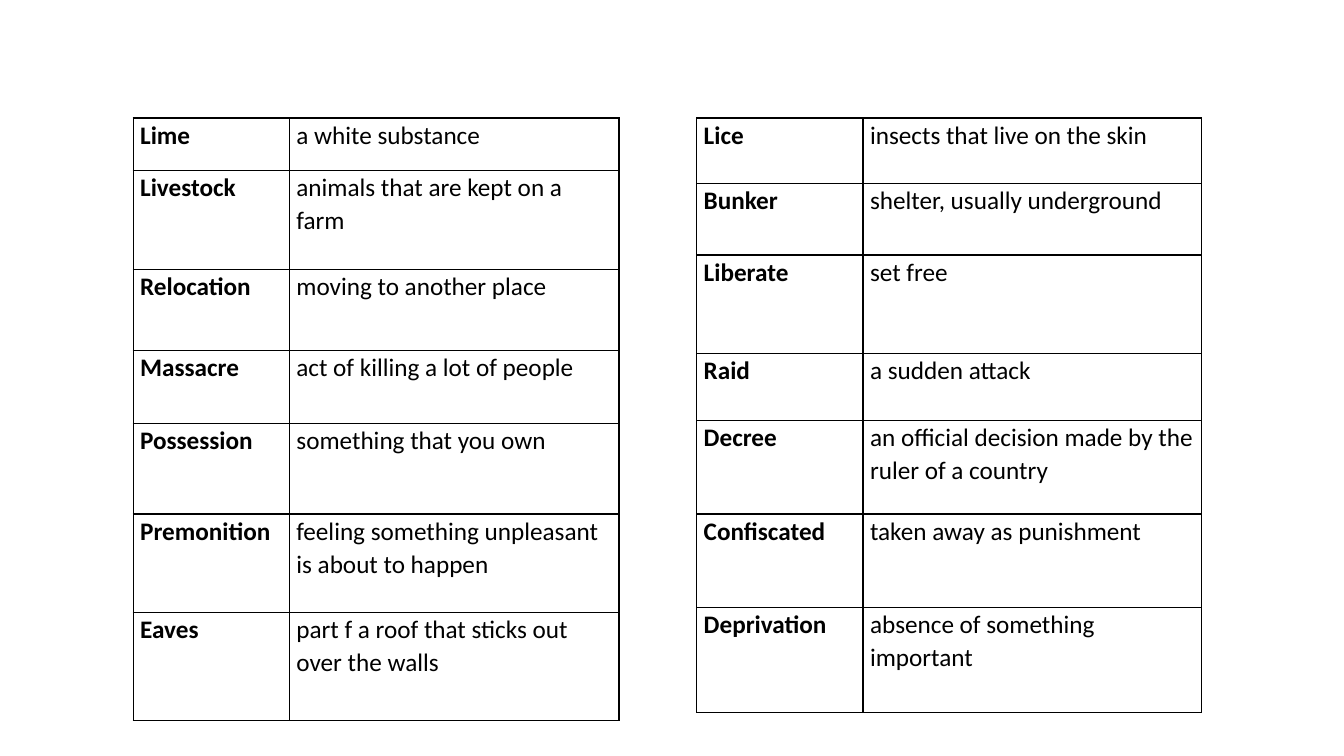
from lxml import etree
from pptx import Presentation
from pptx.dml.color import RGBColor
from pptx.oxml import ns
from pptx.util import Inches, Pt

COLORS = {"ink": "000000"}
FONT = "Calibri"

# Each entry: word, definition, row height in inches
LEFT_WORDS = [
    ("Lime", "a white substance", 0.52),
    ("Livestock", "animals that are kept on a farm", 0.98),
    ("Relocation", "moving to another place", 0.81),
    ("Massacre", "act of killing a lot of people", 0.72),
    ("Possession", "something that you own", 0.9),
    ("Premonition", "feeling something unpleasant is about to happen", 0.98),
    ("Eaves", "part f a roof that sticks out over the walls", 1.07),
]
RIGHT_WORDS = [
    ("Lice", "insects that live on the skin", 0.65),
    ("Bunker", "shelter, usually underground", 0.71),
    ("Liberate", "set free", 0.98),
    ("Raid", "a sudden attack", 0.66),
    ("Decree", "an official decision made by the ruler of a country", 0.93),
    ("Confiscated", "taken away as punishment", 0.93),
    ("Deprivation", "absence of something important", 1.04),
]


def write_text(frame, content, size=18, bold=False, color="ink", spacing=1.07):
    paragraph = frame.paragraphs[0]
    paragraph.line_spacing = spacing
    run = paragraph.add_run()
    run.text = content
    run.font.name = FONT
    run.font.size = Pt(size)
    run.font.bold = bold
    run.font.color.rgb = RGBColor.from_string(COLORS[color])


def draw_borders(cell, color="ink", width=1):
    """Put a solid line on all four sides, ahead of the cell's fill."""
    properties = cell._tc.get_or_add_tcPr()
    for position, side in enumerate(("lnL", "lnR", "lnT", "lnB")):
        line = etree.Element(ns.qn(f"a:{side}"), w=str(Pt(width)))
        fill = etree.SubElement(line, ns.qn("a:solidFill"))
        etree.SubElement(fill, ns.qn("a:srgbClr"), val=COLORS[color])
        properties.insert(position, line)


def add_glossary(slide, left, top, column_widths, entries):
    """Place a two-column table of words and definitions."""
    height = sum(row_height for _, _, row_height in entries)
    glossary = slide.shapes.add_table(
        len(entries), len(column_widths), Inches(left), Inches(top),
        Inches(sum(column_widths)), Inches(height)).table
    glossary.first_row = False
    glossary.horz_banding = False
    for column, width in zip(glossary.columns, column_widths):
        column.width = Inches(width)
    for row, (word, definition, row_height) in zip(glossary.rows, entries):
        row.height = Inches(row_height)
        for index, content in enumerate((word, definition)):
            cell = row.cells[index]
            cell.margin_left = cell.margin_right = Inches(0.07)
            cell.margin_top = cell.margin_bottom = 0
            cell.fill.background()
            draw_borders(cell)
            write_text(cell.text_frame, content, bold=index == 0)


def main():
    deck = Presentation()
    deck.slide_width, deck.slide_height = Inches(13.33), Inches(7.5)
    slide = deck.slides.add_slide(deck.slide_layouts[6])
    add_glossary(slide, 1.32, 1.17, (1.55, 3.27), LEFT_WORDS)
    add_glossary(slide, 6.91, 1.17, (1.65, 3.36), RIGHT_WORDS)
    deck.save("out.pptx")


if __name__ == "__main__":
    main()
